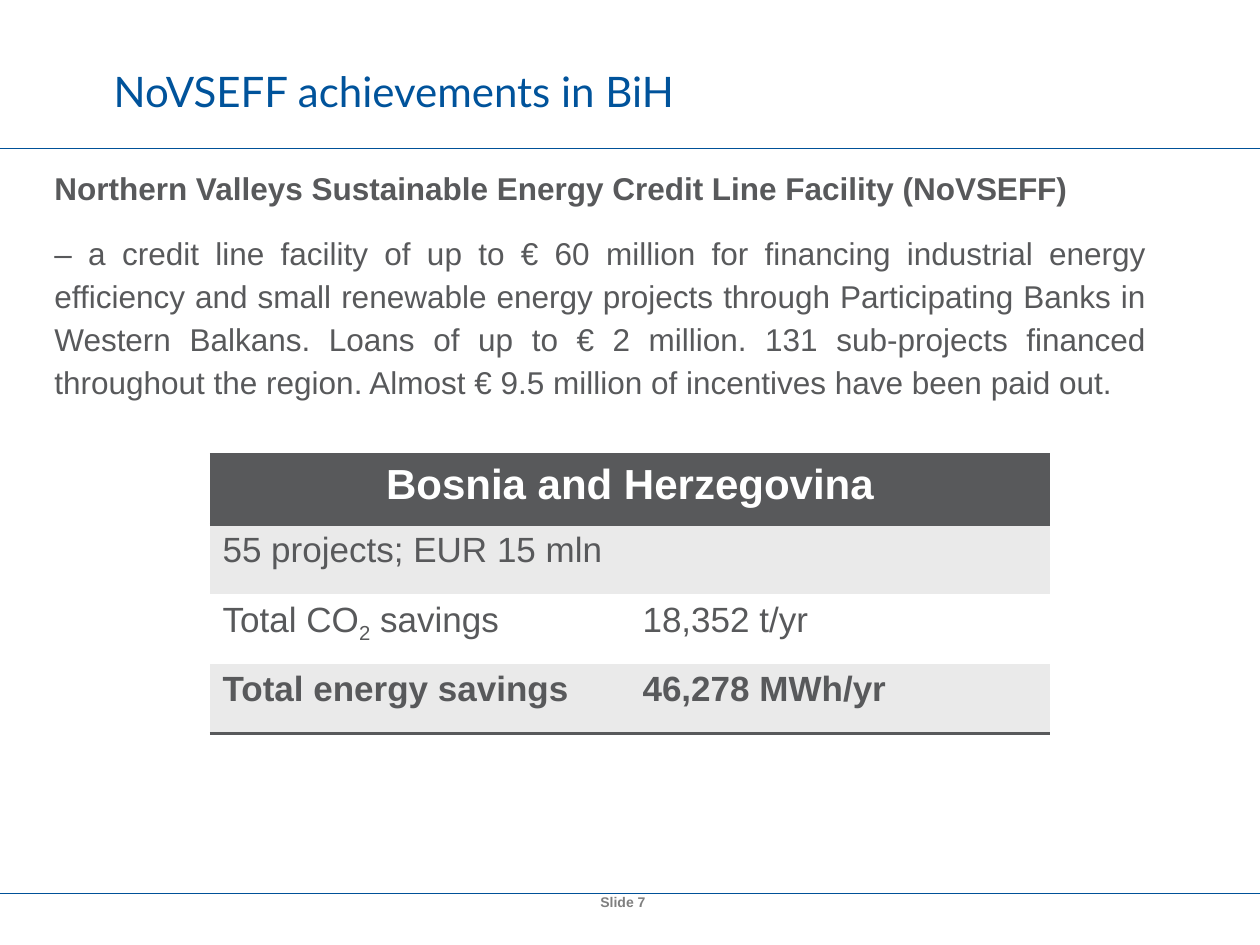
from lxml.etree import SubElement
from pptx import Presentation
from pptx.dml.color import RGBColor
from pptx.enum.shapes import MSO_CONNECTOR as Connector
from pptx.enum.text import MSO_ANCHOR as Anchor, MSO_AUTO_SIZE as AutoSize, PP_ALIGN as Align
from pptx.oxml.ns import qn
from pptx.util import Pt

# Content
TITLE = "NoVSEFF achievements in BiH"
FOOTER = "Slide 7"
BODY = [
    ("Northern Valleys Sustainable Energy Credit Line Facility (NoVSEFF)", True),
    ("– a credit line facility of up to € 60 million for financing industrial energy "
     "efficiency and small renewable energy projects through Participating Banks in "
     "Western Balkans. Loans of up to € 2 million. 131 sub-projects financed throughout "
     "the region. Almost € 9.5 million of incentives have been paid out.", False),
]
# Each cell is a list of runs; a row with one cell spans the table
ROWS = [
    dict(cells=[["Bosnia and Herzegovina"]], fill="dark", color="white", size=24,
         bold=True, align=Align.CENTER, borders=("a:lnT", "a:lnB")),
    dict(cells=[["55 projects; EUR 15 mln"]], fill="band"),
    dict(cells=[["Total CO", "2", " savings"], ["18,352 t/yr"]], fill="white"),
    dict(cells=[["Total energy savings"], ["46,278 MWh/yr"]], fill="band",
         bold=True, borders=("a:lnB",)),
]
SUBSCRIPT = "2"
COLORS = {"rule": "005198", "title": "00539B", "dark": "58595B",
          "band": "EAEAEA", "white": "FFFFFF", "footer": "7F7F7F"}
PAGE_WIDTH, PAGE_HEIGHT = 720, 540
RULES_Y = (85, 510.5)
COLUMN_WIDTH, ROW_HEIGHT, TABLE_TOP = 240, 39.75, 260
NO_STYLE = "{2D5ABB26-0587-4C30-8999-92F81FD0307C}"


def rgb(name):
    return RGBColor.from_string(COLORS[name])


def set_font(para, size, color, bold=False, name="Arial"):
    para.font.name, para.font.size, para.font.bold = name, Pt(size), bold
    para.font.color.rgb = rgb(color)


def add_text_box(page, left, top, width, height):
    frame = page.shapes.add_textbox(Pt(left), Pt(top), Pt(width), Pt(height)).text_frame
    frame.word_wrap = True
    return frame


def add_border(cell, side):
    properties = cell._tc.get_or_add_tcPr()
    line = SubElement(properties, qn(side), w=str(Pt(2)))
    fill = SubElement(line, qn("a:solidFill"))
    SubElement(fill, qn("a:srgbClr"), val=COLORS["dark"])


def fill_row(table, index, row):
    cells = list(table.rows[index].cells)
    if len(row["cells"]) == 1:
        cells[0].merge(cells[-1])
    for cell in cells:
        # Borders come before the fill in the cell properties
        for side in row.get("borders", ()):
            add_border(cell, side)
        cell.fill.solid()
        cell.fill.fore_color.rgb = rgb(row["fill"])
    for cell, texts in zip(cells, row["cells"]):
        para = cell.text_frame.paragraphs[0]
        para.alignment = row.get("align", Align.LEFT)
        set_font(para, row.get("size", 20), row.get("color", "dark"), row.get("bold", False))
        for text in texts:
            span = para.add_run()
            span.text = text
            if text == SUBSCRIPT:
                span.font._element.set("baseline", "-25000")


def main():
    deck = Presentation()
    deck.slide_width, deck.slide_height = Pt(PAGE_WIDTH), Pt(PAGE_HEIGHT)
    page = deck.slides.add_slide(deck.slide_layouts[5])

    # Header and footer rules
    for y in RULES_Y:
        rule = page.shapes.add_connector(Connector.STRAIGHT, 0, Pt(y), Pt(PAGE_WIDTH), Pt(y))
        rule.line.color.rgb, rule.line.width = rgb("rule"), Pt(0.25)
        SubElement(rule._element.spPr, qn("a:effectLst"))

    # Title
    title = page.shapes.title
    title.left, title.top, title.width, title.height = Pt(65), Pt(13.5), Pt(512), Pt(76.5)
    frame = title.text_frame
    frame.text = TITLE
    frame.auto_size, frame.vertical_anchor = AutoSize.NONE, Anchor.MIDDLE
    frame.margin_left = frame.margin_right = frame.margin_top = frame.margin_bottom = 0
    frame.paragraphs[0].alignment = Align.LEFT
    set_font(frame.paragraphs[0], 24, "title", name="Lato")

    # Body text
    frame = add_text_box(page, 24, 90, 638, 141)
    for index, (text, bold) in enumerate(BODY):
        para = frame.add_paragraph() if index else frame.paragraphs[0]
        para.text = text
        para.alignment, para.line_spacing = Align.JUSTIFY, 1.14
        para.space_before, para.space_after = Pt(8.8 if index else 0), Pt(3.6)
        set_font(para, 18, "dark", bold)

    # Savings table, centred on the page
    width = 2 * COLUMN_WIDTH
    holder = page.shapes.add_table(len(ROWS), 2, Pt((PAGE_WIDTH - width) / 2), Pt(TABLE_TOP),
                                   Pt(width), Pt(ROW_HEIGHT * len(ROWS)))
    table = holder.table
    table.first_row = table.horz_banding = False
    table._tbl.tblPr.find(qn("a:tableStyleId")).text = NO_STYLE
    for index, row in enumerate(ROWS):
        table.rows[index].height = Pt(ROW_HEIGHT)
        fill_row(table, index, row)

    # Slide number
    para = add_text_box(page, 281, 507, 150, 17).paragraphs[0]
    para.text, para.alignment = FOOTER, Align.CENTER
    set_font(para, 8, "footer", True)

    deck.save("out.pptx")


if __name__ == "__main__":
    main()
